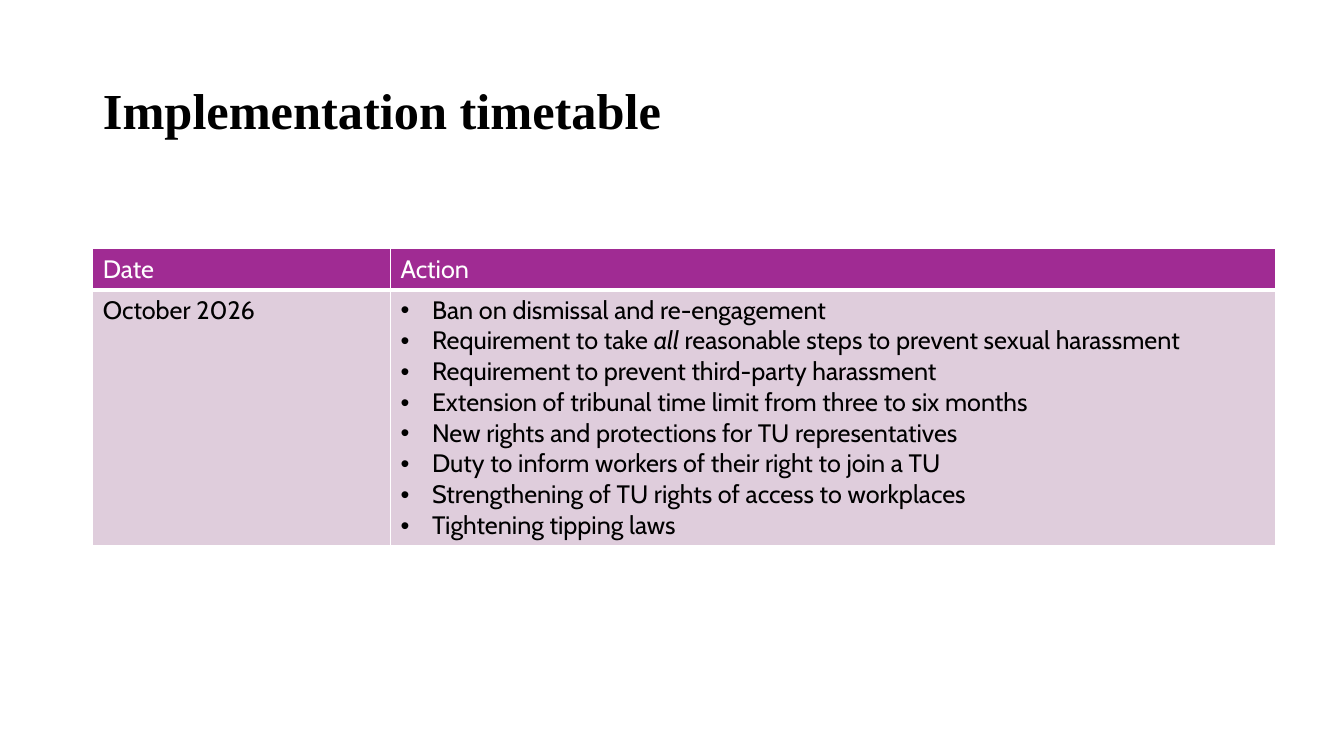
import dataclasses
import typing

import lxml.etree
import pptx
import pptx.dml.color
import pptx.enum.text
import pptx.oxml.ns
import pptx.util

Pt = pptx.util.Pt
RGB = pptx.dml.color.RGBColor.from_string
qn = pptx.oxml.ns.qn


@dataclasses.dataclass(frozen=True)
class Theme:
    title_font: str = "Times New Roman"
    body_font: str = "Cabin"
    title_size: float = 36
    body_size: float = 18
    black: str = "000000"
    white: str = "FFFFFF"
    header_fill: str = "A02B93"
    body_fill: str = "DFCDDC"


THEME = Theme()


class Span(typing.NamedTuple):
    text: str
    italic: bool = False


Line = list[Span]


@dataclasses.dataclass(frozen=True)
class CellSpec:
    lines: list[Line]
    bulleted: bool = False


@dataclasses.dataclass(frozen=True)
class RowSpec:
    height: float
    fill: str
    color: str
    bottom_border: float
    cells: list[CellSpec]


LEFT, WIDTH = 66.3, 844.6
TITLE_TOP, TITLE_HEIGHT = 28.75, 104.4
TABLE_TOP = 177.8
COLUMN_WIDTHS = [212.6, 632]
BULLET_INDENT = 22.5

ROWS = [
    RowSpec(26, THEME.header_fill, THEME.white, 3, [
        CellSpec([[Span("Date")]]),
        CellSpec([[Span("Action")]]),
    ]),
    RowSpec(181, THEME.body_fill, THEME.black, 1, [
        CellSpec([[Span("October 2026")]]),
        CellSpec([
            [Span("Ban on dismissal and re-engagement")],
            [Span("Requirement to take "), Span("all ", italic=True),
             Span("reasonable steps to prevent sexual harassment")],
            [Span("Requirement to prevent third-party harassment")],
            [Span("Extension of tribunal time limit from three to six months")],
            [Span("New rights and protections for TU representatives")],
            [Span("Duty to inform workers of their right to join a TU")],
            [Span("Strengthening of TU rights of access to workplaces")],
            [Span("Tightening tipping laws")],
        ], bulleted=True),
    ]),
]


def set_attributes(target: typing.Any, values: dict[str, typing.Any]) -> None:
    for name, value in values.items():
        setattr(target, name, value)


def set_font(font: typing.Any, color: str, **values: typing.Any) -> None:
    set_attributes(font, values)
    font.color.rgb = RGB(color)


def add_bullet(p: typing.Any) -> None:
    pPr = p._p.get_or_add_pPr()
    pPr.set("marL", str(Pt(BULLET_INDENT)))
    pPr.set("indent", str(-Pt(BULLET_INDENT)))
    lxml.etree.SubElement(pPr, qn("a:buFont"), typeface="Arial")
    lxml.etree.SubElement(pPr, qn("a:buChar"), char="•")


def add_borders(cell: typing.Any, bottom: float) -> None:
    """Draw white cell borders; must run before the cell is filled."""
    tcPr = cell._tc.get_or_add_tcPr()
    for side, width in {"L": 1, "R": 1, "T": 1, "B": bottom}.items():
        ln = lxml.etree.SubElement(tcPr, qn(f"a:ln{side}"), w=str(Pt(width)))
        fill = lxml.etree.SubElement(ln, qn("a:solidFill"))
        lxml.etree.SubElement(fill, qn("a:srgbClr"), val=THEME.white)


def fill_cell(cell: typing.Any, spec: CellSpec, row: RowSpec) -> None:
    add_borders(cell, row.bottom_border)
    cell.fill.solid()
    cell.fill.fore_color.rgb = RGB(row.fill)
    tf = cell.text_frame
    for i, line in enumerate(spec.lines):
        p = tf.add_paragraph() if i else tf.paragraphs[0]
        if spec.bulleted:
            add_bullet(p)
        for span in line:
            r = p.add_run()
            r.text = span.text
            set_font(r.font, row.color, name=THEME.body_font,
                     size=Pt(THEME.body_size), bold=False, italic=span.italic)


def add_title(s: typing.Any, text: str) -> None:
    sp = s.shapes.title
    set_attributes(sp, {"left": Pt(LEFT), "top": Pt(TITLE_TOP),
                        "width": Pt(WIDTH), "height": Pt(TITLE_HEIGHT)})
    tf = sp.text_frame
    set_attributes(tf, {
        "word_wrap": True,
        "auto_size": pptx.enum.text.MSO_AUTO_SIZE.NONE,
        "vertical_anchor": pptx.enum.text.MSO_ANCHOR.MIDDLE,
    })
    p = tf.paragraphs[0]
    set_attributes(p, {"alignment": pptx.enum.text.PP_ALIGN.LEFT,
                       "line_spacing": 0.9})
    r = p.add_run()
    r.text = text
    set_font(r.font, THEME.black, name=THEME.title_font,
             size=Pt(THEME.title_size), bold=True)


def add_timetable(s: typing.Any, rows: list[RowSpec]) -> None:
    height = sum(row.height for row in rows)
    table = s.shapes.add_table(len(rows), len(COLUMN_WIDTHS), Pt(LEFT),
                               Pt(TABLE_TOP), Pt(WIDTH), Pt(height)).table
    table.horz_banding = False
    for column, width in zip(table.columns, COLUMN_WIDTHS):
        column.width = Pt(width)
    for i, row in enumerate(rows):
        table.rows[i].height = Pt(row.height)
        for j, spec in enumerate(row.cells):
            fill_cell(table.cell(i, j), spec, row)


def main() -> None:
    prs = pptx.Presentation()
    set_attributes(prs, {"slide_width": Pt(960), "slide_height": Pt(540)})
    s = prs.slides.add_slide(prs.slide_layouts[5])
    add_title(s, "Implementation timetable")
    add_timetable(s, ROWS)
    prs.save("out.pptx")


if __name__ == "__main__":
    main()
